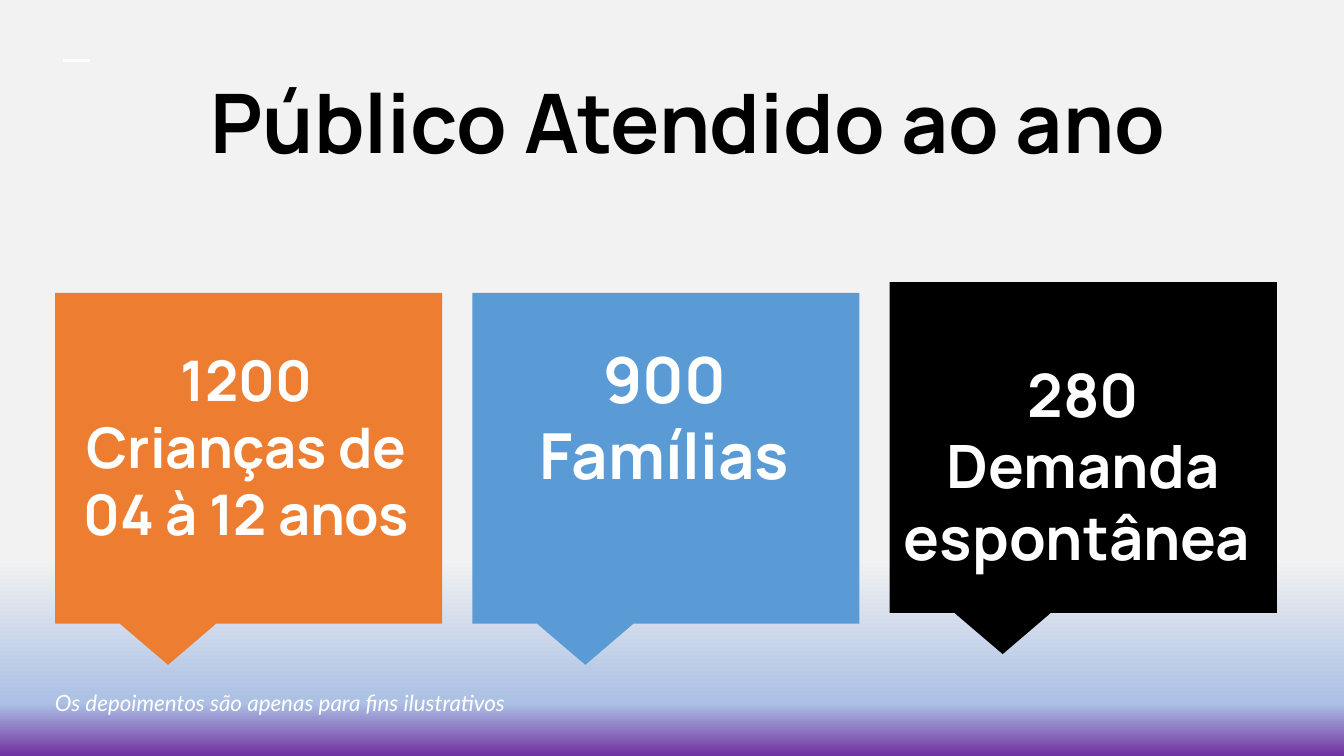
from pptx import Presentation
from pptx.dml.color import RGBColor
from pptx.enum.shapes import MSO_CONNECTOR, MSO_SHAPE
from pptx.enum.text import MSO_ANCHOR, PP_ALIGN
from pptx.oxml import parse_xml
from pptx.oxml.ns import nsdecls, qn
from pptx.util import Inches, Pt

CALLOUT = MSO_SHAPE.RECTANGULAR_CALLOUT
STRAIGHT = MSO_CONNECTOR.STRAIGHT
TOP, MIDDLE = MSO_ANCHOR.TOP, MSO_ANCHOR.MIDDLE
LEFT, CENTER = PP_ALIGN.LEFT, PP_ALIGN.CENTER

COLORS = {
    "black": "000000",
    "white": "FFFFFF",
    "orange": "ED7D31",
    "blue": "5B9BD5",
    "gray": "F2F2F2",
    "pale_blue": "ABC0E4",
    "purple": "7030A0",
}
BACKGROUND_STOPS = [(74, "gray"), (93, "pale_blue"), (100, "purple")]

CALLOUT_LEFT, CALLOUT_STEP = 0.41, 3.105
CALLOUT_WIDTH, CALLOUT_HEIGHT = 2.88, 2.46
AUDIENCES = [
    ("1200\vCrianças de 04 à 12 anos", 30, "orange", 2.18, (0.48, 2.47, 2.71, 1.69)),
    ("900\vFamílias", 34, "blue", 2.18, (3.59, 2.43, 2.71, 1.95)),
    ("280\vDemanda espontânea ", 32, "black", 2.1, (6.62, 2.56, 2.88, 1.69)),
]


def rgb(name):
    return RGBColor.from_string(COLORS[name])


def set_background(slide):
    slide.background.fill.solid()
    properties = slide.element.find(".//" + qn("p:bgPr"))
    stops = "".join(
        f'<a:gs pos="{position * 1000}"><a:srgbClr val="{COLORS[name]}"/></a:gs>'
        for position, name in BACKGROUND_STOPS
    )
    properties[0] = parse_xml(
        f'<a:gradFill {nsdecls("a")}><a:gsLst>{stops}</a:gsLst>'
        '<a:lin ang="5400000" scaled="0"/></a:gradFill>'
    )


def add_dash(slide):
    dash = slide.shapes.add_connector(
        STRAIGHT, Inches(0.47), Inches(0.45), Inches(0.67), Inches(0.45)
    )
    dash.line.color.rgb = rgb("white")
    dash.line.width = Pt(1.5)
    properties = dash._element.spPr
    properties.append(parse_xml(f'<a:effectLst {nsdecls("a")}/>'))


def add_text(slide, text, box, size, color, font="Manrope",
             bold=True, italic=False, align=CENTER, anchor=TOP):
    shape = slide.shapes.add_textbox(*map(Inches, box))
    frame = shape.text_frame
    frame.word_wrap = True
    frame.vertical_anchor = anchor
    frame.margin_left = frame.margin_right = Inches(0.1)
    frame.margin_top = frame.margin_bottom = Inches(0.1)
    paragraph = frame.paragraphs[0]
    paragraph.text = text
    paragraph.alignment = align
    paragraph.font.name = font
    paragraph.font.size = Pt(size)
    paragraph.font.bold = bold
    paragraph.font.italic = italic
    paragraph.font.color.rgb = rgb(color)


def add_callout(slide, left, top, color):
    shape = slide.shapes.add_shape(
        CALLOUT, Inches(left), Inches(top), Inches(CALLOUT_WIDTH), Inches(CALLOUT_HEIGHT)
    )
    shape.adjustments[0] = -0.208
    shape.adjustments[1] = 0.625
    shape.shadow.inherit = False
    shape.fill.solid()
    shape.fill.fore_color.rgb = rgb(color)
    shape.line.fill.background()


def main():
    presentation = Presentation()
    presentation.slide_width = Inches(10)
    presentation.slide_height = Inches(5.625)
    slide = presentation.slides.add_slide(presentation.slide_layouts[6])

    set_background(slide)
    add_dash(slide)
    add_text(slide, "Público Atendido ao ano", (0.31, 0.43, 9.62, 1.12), 44, "black")
    for index, (text, size, color, top, text_box) in enumerate(AUDIENCES):
        add_callout(slide, CALLOUT_LEFT + index * CALLOUT_STEP, top, color)
        add_text(slide, text, text_box, size, "white")
    add_text(slide, "Os depoimentos são apenas para fins ilustrativos",
             (0.31, 5.09, 6.83, 0.28), 12, "white", font="Lato",
             bold=False, italic=True, align=LEFT, anchor=MIDDLE)

    presentation.save("out.pptx")


if __name__ == "__main__":
    main()
